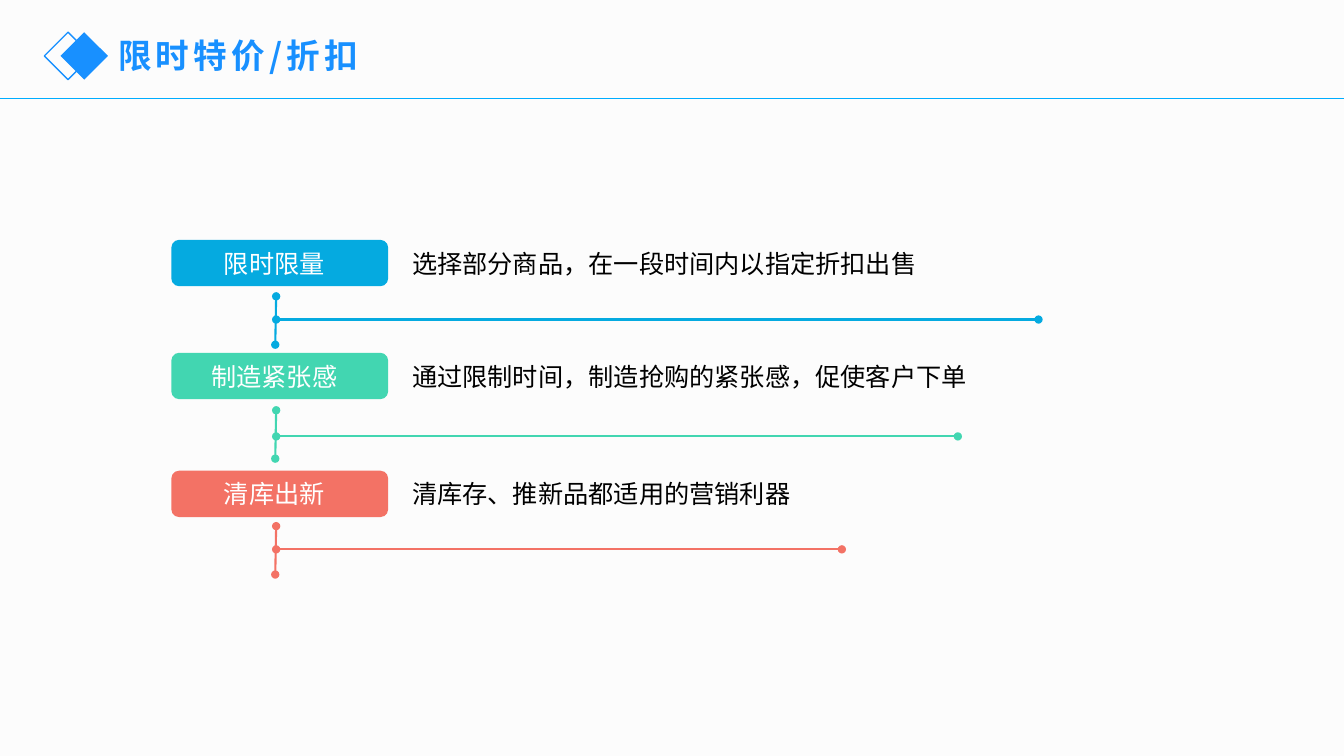
"""Build the slide on limited-time prices and discounts."""
import dataclasses

import lxml.etree
import pptx
import pptx.dml.color
import pptx.enum.shapes
import pptx.enum.text
import pptx.oxml.ns
import pptx.util


@dataclasses.dataclass(frozen=True)
class Theme:
    font: str = "Noto Sans CJK SC"
    heading_size: int = 24
    body_size: int = 18
    background: str = "FCFCFC"
    heading: str = "1890FF"
    rule: str = "00ADFF"
    body: str = "000000"
    on_label: str = "FFFFFF"
    blue: str = "05AAE0"
    green: str = "42D6B1"
    red: str = "F37265"


theme = Theme()
rgb = pptx.dml.color.RGBColor.from_string
qn = pptx.oxml.ns.qn
shapes_enum = pptx.enum.shapes.MSO_SHAPE
align = pptx.enum.text.PP_ALIGN

deck = pptx.Presentation()
deck.slide_width = pptx.util.Inches(13.33)
deck.slide_height = pptx.util.Inches(7.5)
column = deck.slide_width / 100
row = deck.slide_height / 100

slide = deck.slides.add_slide(deck.slide_layouts[5])
slide.background.fill.solid()
slide.background.fill.fore_color.rgb = rgb(theme.background)


def write(holder, text, color=theme.body, size=theme.body_size, bold=False,
          alignment=align.LEFT, spacing=0):
    frame = holder.text_frame
    frame.word_wrap = True
    frame.vertical_anchor = pptx.enum.text.MSO_ANCHOR.MIDDLE
    paragraph = frame.paragraphs[0]
    paragraph.alignment = alignment
    run = paragraph.add_run()
    run.text = text
    run.font.name = theme.font
    run.font.size = pptx.util.Pt(size)
    run.font.bold = bold
    run.font.color.rgb = rgb(color)
    properties = run._r.get_or_add_rPr()
    properties.set("spc", str(spacing * 100))
    lxml.etree.SubElement(properties, qn("a:ea"), typeface=theme.font)


def draw_line(x1, y1, x2, y2, color, weight, ends=()):
    line = slide.shapes.add_connector(
        pptx.enum.shapes.MSO_CONNECTOR.STRAIGHT,
        int(x1 * column), int(y1 * row), int(x2 * column), int(y2 * row))
    line.line.color.rgb = rgb(color)
    line.line.width = pptx.util.Pt(weight)
    outline = line.line._get_or_add_ln()
    for end in ends:
        lxml.etree.SubElement(outline, qn(end), type="oval")
    lxml.etree.SubElement(line._element.spPr, qn("a:effectLst"))


draw_line(0, 13.07, 100, 13.07, theme.rule, 1)

for diamond_left, filled in ((3.3, False), (4.5, True)):
    diamond = slide.shapes.add_shape(
        shapes_enum.DIAMOND, int(diamond_left * column), int(4.27 * row),
        int(3.53 * column), int(6.27 * row))
    diamond.shadow.inherit = False
    if filled:
        diamond.fill.solid()
        diamond.fill.fore_color.rgb = rgb(theme.heading)
        diamond.line.fill.background()
    else:
        diamond.fill.background()
        diamond.line.color.rgb = rgb(theme.heading)
        diamond.line.width = pptx.util.Pt(1)

heading = slide.shapes.title
heading.left, heading.top = int(8.03 * column), int(4 * row)
heading.width, heading.height = int(41.18 * column), int(6.67 * row)
write(heading, "限时特价/折扣", color=theme.heading, size=theme.heading_size,
      bold=True, spacing=3)

label_left, label_width, label_height = 12.75, 16.13, 6.13
stem_top, stem_bottom, stem_length = 20.55, 20.48, 6.4
detail_left = 29.93
dots = ("a:headEnd", "a:tailEnd")

tactics = (
    ("限时限量", "选择部分商品，在一段时间内以指定折扣出售",
     theme.blue, 31.73, 39.2, 42.27, 77.27),
    ("制造紧张感", "通过限制时间，制造抢购的紧张感，促使客户下单",
     theme.green, 46.67, 54.27, 57.73, 71.27),
    ("清库出新", "清库存、推新品都适用的营销利器",
     theme.red, 62.27, 69.6, 72.67, 62.64),
)

for name, detail, color, top, stem, branch, branch_end in tactics:
    label = slide.shapes.add_shape(
        shapes_enum.ROUNDED_RECTANGLE, int(label_left * column), int(top * row),
        int(label_width * column), int(label_height * row))
    label.shadow.inherit = False
    label.fill.solid()
    label.fill.fore_color.rgb = rgb(color)
    label.line.fill.background()
    label.text_frame.margin_left = 0
    label.text_frame.margin_right = pptx.util.Inches(0.11)
    write(label, name, color=theme.on_label, alignment=align.CENTER)

    description = slide.shapes.add_textbox(
        int(detail_left * column), int(top * row),
        int(45 * column), int(label_height * row))
    write(description, detail)

    draw_line(stem_top, stem, stem_bottom, stem + stem_length, color, 1.5, dots)
    draw_line(branch_end, branch, stem_top, branch, color, 1.5, dots)

deck.save("out.pptx")
